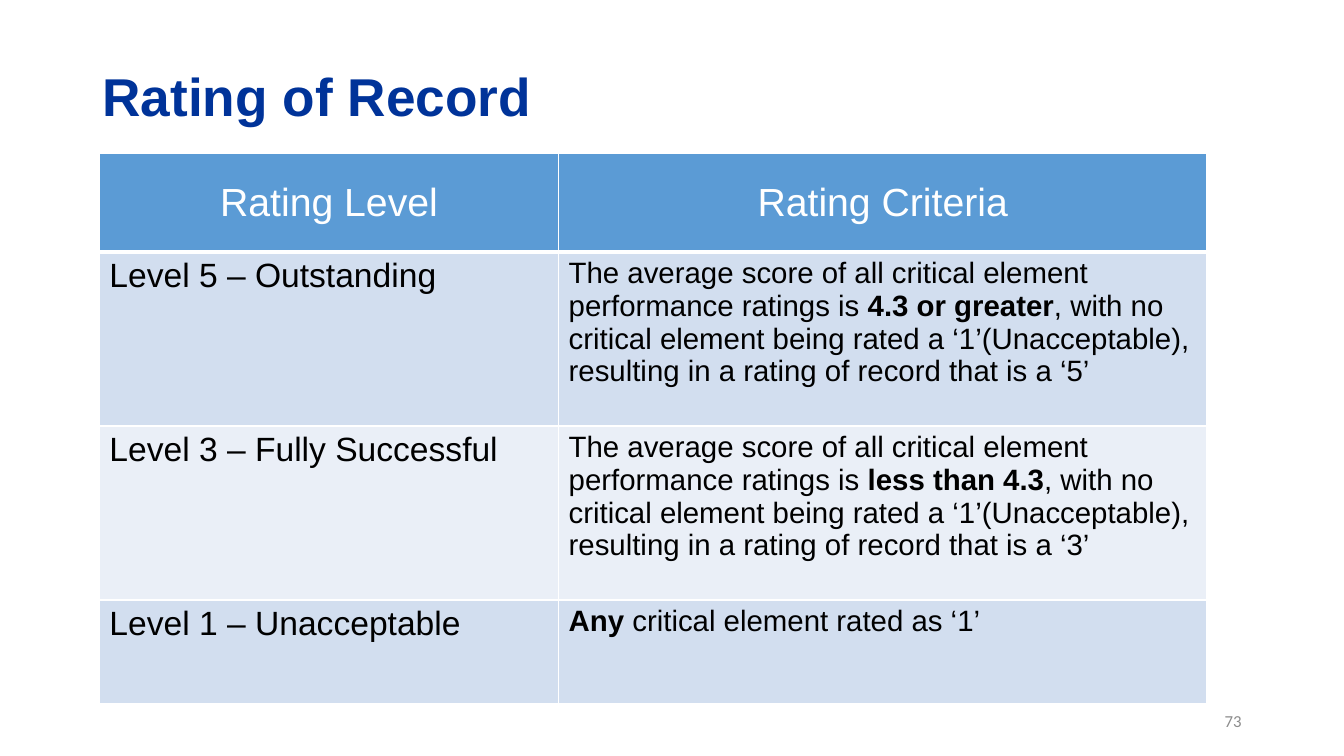
from dataclasses import dataclass

import pptx
import pptx.dml.color
import pptx.enum.text
import pptx.oxml
import pptx.oxml.ns
import pptx.util
from pptx.dml.color import RGBColor
from pptx.enum.text import MSO_ANCHOR, PP_ALIGN

NAVY = RGBColor(0x00, 0x33, 0x99)
BLUE = RGBColor(0x5B, 0x9B, 0xD5)
DARK_BAND = RGBColor(0xD2, 0xDE, 0xEF)
LIGHT_BAND = RGBColor(0xEA, 0xEF, 0xF7)
WHITE = RGBColor(0xFF, 0xFF, 0xFF)
BLACK = RGBColor(0x00, 0x00, 0x00)
GRAY = RGBColor(0x8C, 0x8C, 0x8C)

COLUMN_WIDTHS = (328, 463)
HEADER_HEIGHT = 70.5


@dataclass(frozen=True)
class TextRun:
    text: str
    bold: bool = False


@dataclass(frozen=True)
class Rating:
    level: str
    criteria: tuple[TextRun, ...]
    height: float
    fill: RGBColor


def score_criteria(threshold: str, record: int) -> tuple[TextRun, ...]:
    return (
        TextRun("The average score of all critical element performance ratings is "),
        TextRun(threshold, bold=True),
        TextRun(
            ", with no critical element being rated a ‘1’(Unacceptable), "
            f"resulting in a rating of record that is a ‘{record}’"
        ),
    )


RATINGS = (
    Rating("Level 5 – Outstanding", score_criteria("4.3 or greater", 5), 124.3, DARK_BAND),
    Rating("Level 3 – Fully Successful", score_criteria("less than 4.3", 3), 124.3, LIGHT_BAND),
    Rating(
        "Level 1 – Unacceptable",
        (TextRun("Any", bold=True), TextRun(" critical element rated as ‘1’")),
        74.3,
        DARK_BAND,
    ),
)


def write_runs(
    paragraph, runs: tuple[TextRun, ...], size: float, color: RGBColor, font_name: str = "Arial"
) -> None:
    for text_run in runs:
        run = paragraph.add_run()
        run.text = text_run.text
        run.font.name = font_name
        run.font.size = pptx.util.Pt(size)
        run.font.bold = text_run.bold
        run.font.color.rgb = color


def set_borders(cell, bottom_width: float) -> None:
    properties = cell._tc.get_or_add_tcPr()
    widths = {"lnL": 1, "lnR": 1, "lnT": 1, "lnB": bottom_width}
    for index, (side, width) in enumerate(widths.items()):
        border = pptx.oxml.parse_xml(
            f'<a:{side} {pptx.oxml.ns.nsdecls("a")} w="{pptx.util.Pt(width)}">'
            f'<a:solidFill><a:srgbClr val="{WHITE}"/></a:solidFill></a:{side}>'
        )
        properties.insert(index, border)


def fill_cell(
    cell,
    runs: tuple[TextRun, ...],
    size: float,
    fill: RGBColor,
    header: bool = False,
) -> None:
    cell.fill.solid()
    cell.fill.fore_color.rgb = fill
    set_borders(cell, 3 if header else 1)
    paragraph = cell.text_frame.paragraphs[0]
    if header:
        cell.vertical_anchor = MSO_ANCHOR.MIDDLE
        paragraph.alignment = PP_ALIGN.CENTER
    write_runs(paragraph, runs, size, WHITE if header else BLACK)


def add_title(slide) -> None:
    title = slide.shapes.title
    title.left, title.top = pptx.util.Pt(66), pptx.util.Pt(26)
    title.width, title.height = pptx.util.Pt(781), pptx.util.Pt(90.5)
    title.text_frame.vertical_anchor = MSO_ANCHOR.MIDDLE
    paragraph = title.text_frame.paragraphs[0]
    paragraph.alignment = PP_ALIGN.LEFT
    paragraph.line_spacing = 0.9
    write_runs(paragraph, (TextRun("Rating of Record", bold=True),), 38, NAVY)


def add_rating_table(slide) -> None:
    heights = (HEADER_HEIGHT, *(rating.height for rating in RATINGS))
    table = slide.shapes.add_table(
        len(heights),
        len(COLUMN_WIDTHS),
        pptx.util.Pt(71),
        pptx.util.Pt(109.5),
        pptx.util.Pt(sum(COLUMN_WIDTHS)),
        pptx.util.Pt(sum(heights)),
    ).table
    for column, width in zip(table.columns, COLUMN_WIDTHS):
        column.width = pptx.util.Pt(width)
    for row, height in zip(table.rows, heights):
        row.height = pptx.util.Pt(height)
    for column_index, heading in enumerate(("Rating Level", "Rating Criteria")):
        fill_cell(table.cell(0, column_index), (TextRun(heading),), 28, BLUE, header=True)
    for row_index, rating in enumerate(RATINGS, start=1):
        fill_cell(table.cell(row_index, 0), (TextRun(rating.level),), 24, rating.fill)
        fill_cell(table.cell(row_index, 1), rating.criteria, 21, rating.fill)


def add_page_number(slide) -> None:
    page_number = slide.shapes.add_textbox(
        pptx.util.Pt(678), pptx.util.Pt(500.5), pptx.util.Pt(216), pptx.util.Pt(28.75)
    )
    text_frame = page_number.text_frame
    text_frame.word_wrap = True
    text_frame.vertical_anchor = MSO_ANCHOR.MIDDLE
    paragraph = text_frame.paragraphs[0]
    paragraph.alignment = PP_ALIGN.RIGHT
    write_runs(paragraph, (TextRun("73"),), 12, GRAY, "Calibri")


def main() -> None:
    presentation = pptx.Presentation()
    presentation.slide_width = pptx.util.Pt(960)
    presentation.slide_height = pptx.util.Pt(540)
    slide = presentation.slides.add_slide(presentation.slide_layouts[5])
    add_title(slide)
    add_rating_table(slide)
    add_page_number(slide)
    presentation.save("out.pptx")


if __name__ == "__main__":
    main()
